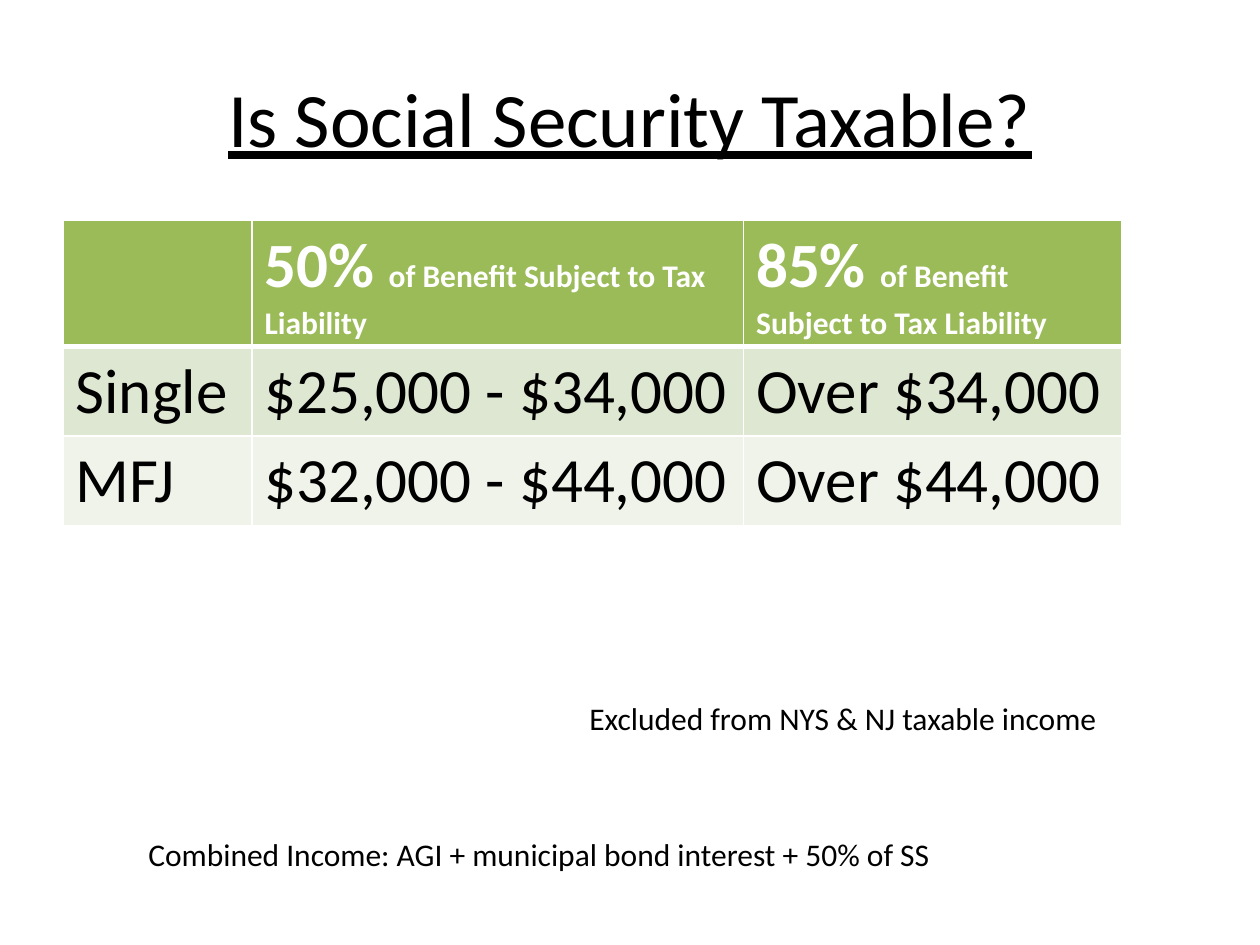
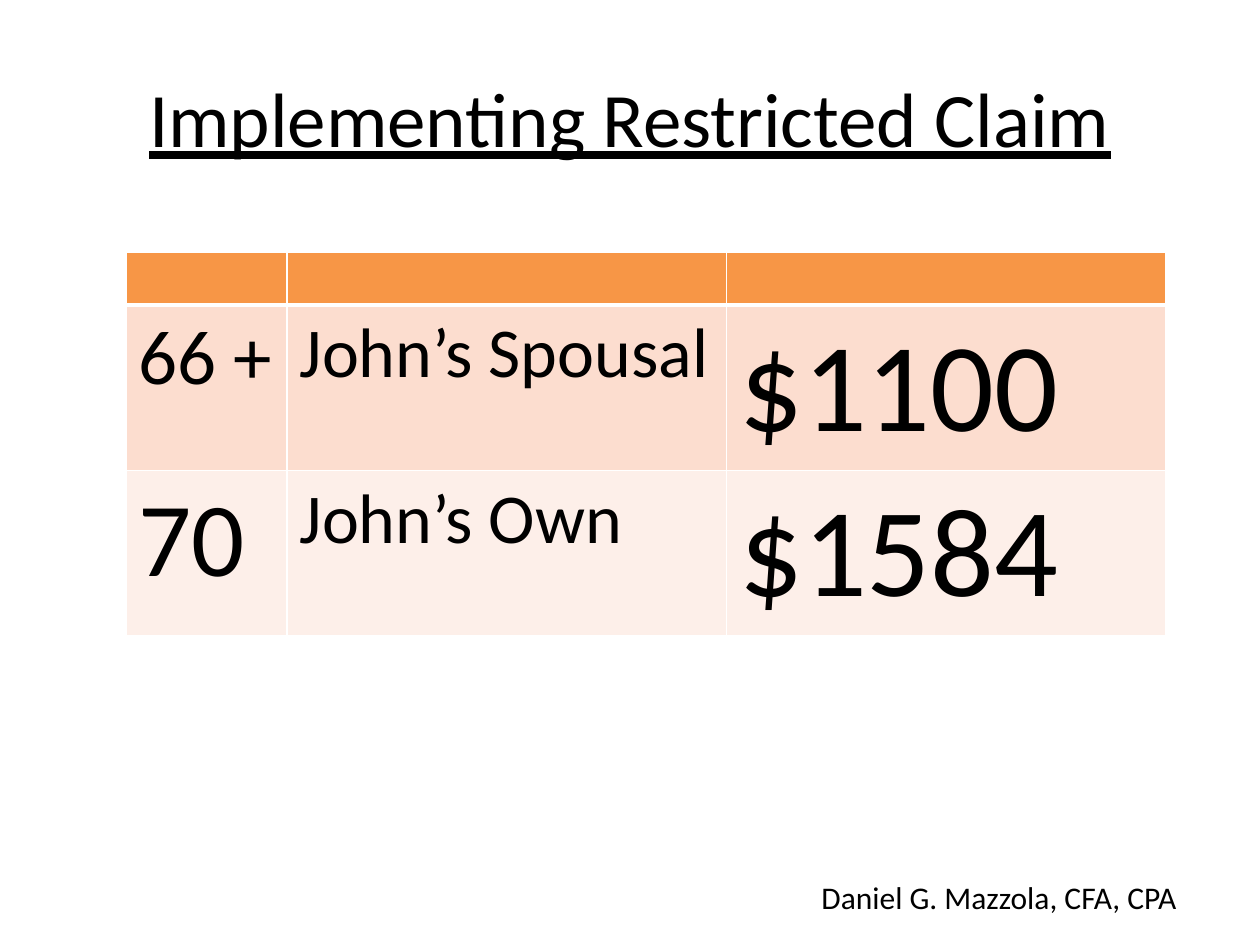
from dataclasses import dataclass
from typing import NamedTuple

from lxml import etree
from pptx import Presentation
from pptx import util as u
from pptx.dml import color
from pptx.enum import text
from pptx.oxml import ns

HUES = {
    "ink": "000000", "white": "FFFFFF",
    "green": "9BBB59", "moss": "DEE7D1", "mint": "EFF3EA",
    "orange": "F79646", "peach": "FCDDCF", "cream": "FDEFE9",
}
FONT = "Calibri"
THIN, THICK = u.Pt(1), u.Pt(3)


class Run(NamedTuple):
    words: str
    size: int = 18
    hue: str = "ink"
    bold: bool = False
    line: bool = False


@dataclass
class Note:
    words: str
    left: float
    top: float
    width: float


@dataclass
class Grid:
    left: float
    top: float
    cols: list[float]
    rows: list[float]
    fills: list[str]
    cells: list[list[list[Run]]]


@dataclass
class Page:
    title: str
    grid: Grid
    notes: list[Note]


def head(share: str) -> list[Run]:
    return [Run(share + " ", 36, "white", True),
            Run("of Benefit Subject to Tax Liability", 18, "white", True)]


def big(*words: str) -> list[list[Run]]:
    return [[Run(word, 36)] for word in words]


PAGES = [
    Page(
        "Is Social Security Taxable?",
        Grid(1.27, 4.45, [3.81, 9.91, 7.62], [2.54, 1.8, 1.8],
             ["green", "moss", "mint"],
             [[[], head("50%"), head("85%")],
              big("Single", "$25,000 - $34,000", "Over $34,000"),
              big("MFJ", "$32,000 - $44,000", "Over $44,000")]),
        [Note("Combined Income: AGI + municipal bond interest + 50% of SS",
              2.74, 16.71, 20.52),
         Note("Excluded from NYS & NJ taxable income", 11.63, 13.97, 11.63)],
    ),
    Page(
        "Implementing Restricted Claim",
        Grid(2.54, 5.08, [3.25, 8.86, 8.86], [1.07, 3.33, 3.33],
             ["orange", "peach", "cream"],
             [[[], [], []],
              [[Run("66 +", 44)], [Run("John’s Spousal", 40)], [Run("$1100", 72)]],
              [[Run("70", 60)], [Run("John’s Own", 40)], [Run("$1584", 72)]]]),
        [Note("Daniel G. Mazzola, CFA, CPA", 16.31, 17.58, 8.89)],
    ),
]


def tint(hue: str) -> color.RGBColor:
    return color.RGBColor.from_string(HUES[hue])


def apply(target, values: dict) -> None:
    for name, value in values.items():
        setattr(target, name, value)


def write(para, runs: list[Run]) -> None:
    for item in runs:
        run = para.add_run()
        run.text = item.words
        apply(run.font, {"name": FONT, "size": u.Pt(item.size),
                         "bold": item.bold, "underline": item.line})
        run.font.color.rgb = tint(item.hue)


def add_box(slide, spot: tuple, run: Run, form: dict, align=None) -> None:
    frame = slide.shapes.add_textbox(*map(u.Cm, spot)).text_frame
    apply(frame, {"word_wrap": True, **form})
    para = frame.paragraphs[0]
    para.alignment = align
    write(para, [run])


def add_title(slide, words: str) -> None:
    add_box(slide, (1.27, 0.76, 22.86, 3.18), Run(words, 44, line=True),
            {"vertical_anchor": text.MSO_ANCHOR.MIDDLE},
            text.PP_ALIGN.CENTER)


def add_note(slide, note: Note) -> None:
    add_box(slide, (note.left, note.top, note.width, 1.03), Run(note.words),
            {"auto_size": text.MSO_AUTO_SIZE.SHAPE_TO_FIT_TEXT})


def edge(cell, row: int) -> None:
    """Draw white borders, thick where the header meets the body."""
    props = cell._tc.get_or_add_tcPr()
    widths = {"L": THIN, "R": THIN, "T": THICK if row == 1 else THIN,
              "B": THICK if row == 0 else THIN}
    for side, width in widths.items():
        line = etree.SubElement(props, ns.qn("a:ln" + side), w=str(width))
        fill = etree.SubElement(line, ns.qn("a:solidFill"))
        etree.SubElement(fill, ns.qn("a:srgbClr"), val=HUES["white"])


def add_grid(slide, grid: Grid) -> None:
    spot = (grid.left, grid.top, sum(grid.cols), sum(grid.rows))
    table = slide.shapes.add_table(
        len(grid.rows), len(grid.cols), *map(u.Cm, spot)).table
    apply(table, {"first_row": False, "horz_banding": False})
    for col, width in zip(table.columns, grid.cols):
        col.width = u.Cm(width)
    for r, (height, hue, cells) in enumerate(zip(grid.rows, grid.fills, grid.cells)):
        table.rows[r].height = u.Cm(height)
        for c, runs in enumerate(cells):
            cell = table.cell(r, c)
            edge(cell, r)
            cell.fill.solid()
            cell.fill.fore_color.rgb = tint(hue)
            write(cell.text_frame.paragraphs[0], runs)


def main() -> None:
    deck = Presentation()
    apply(deck, {"slide_width": u.Cm(25.4), "slide_height": u.Cm(19.05)})
    for page in PAGES:
        slide = deck.slides.add_slide(deck.slide_layouts[6])
        add_title(slide, page.title)
        add_grid(slide, page.grid)
        for note in page.notes:
            add_note(slide, note)
    deck.save("out.pptx")


if __name__ == "__main__":
    main()
